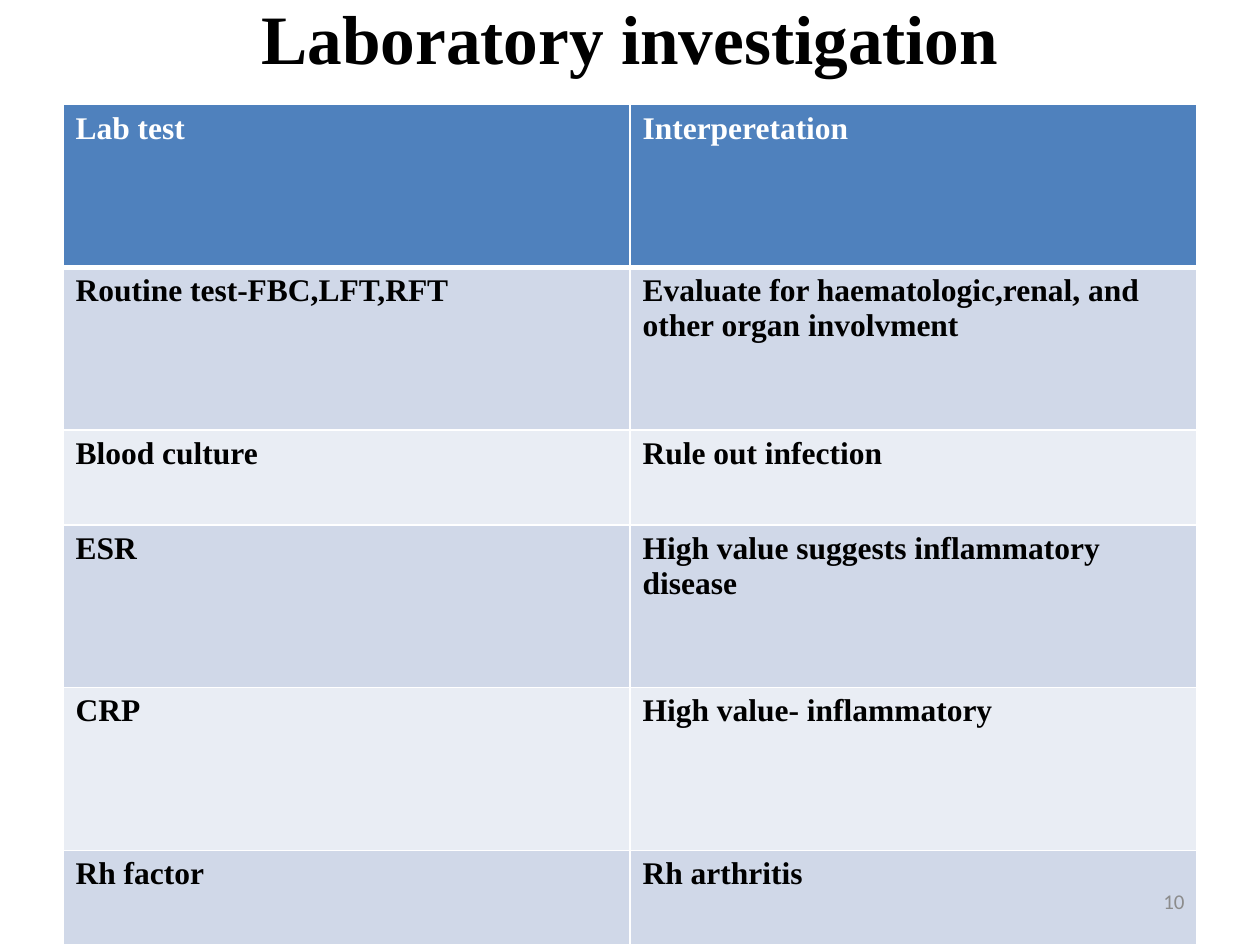
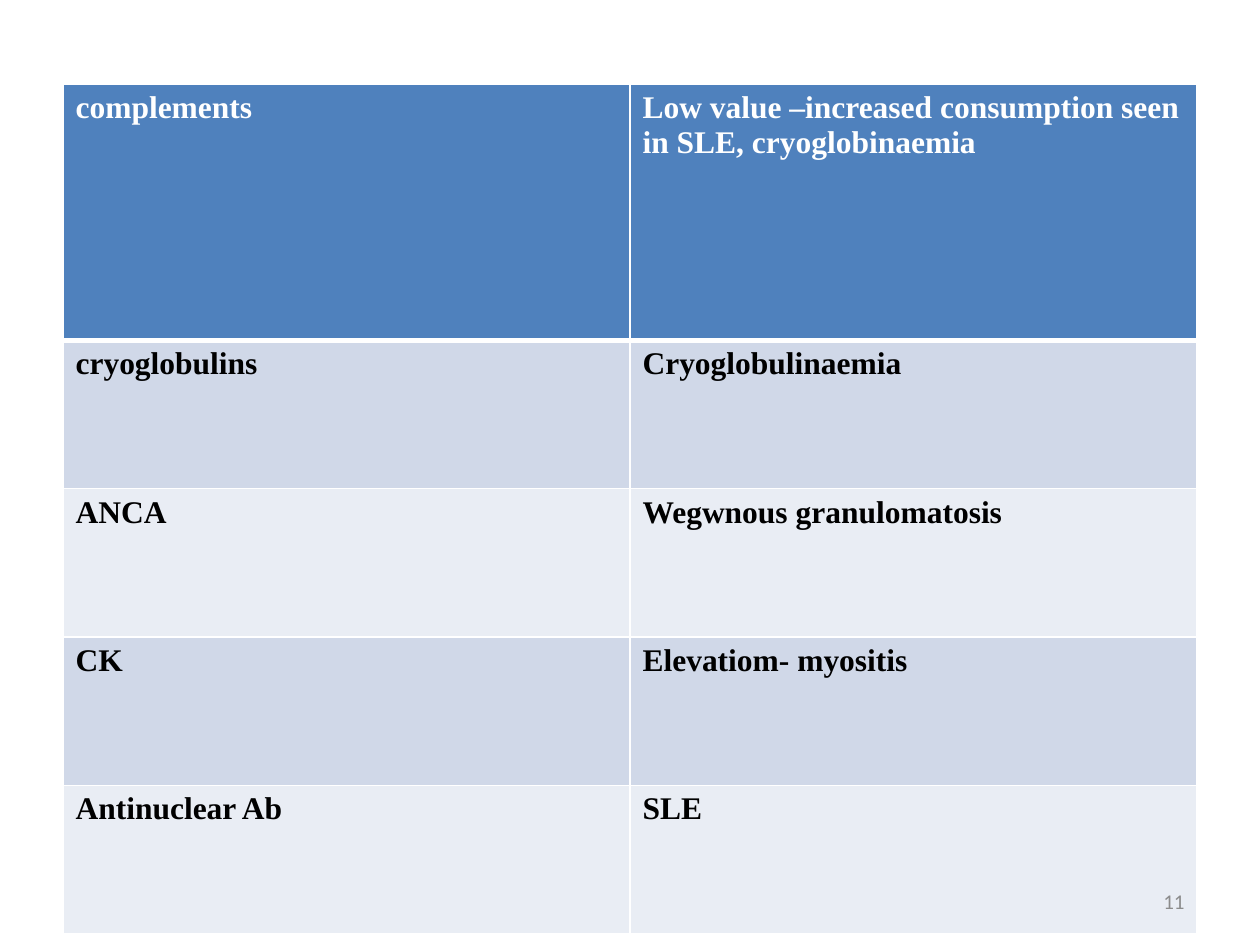
from dataclasses import dataclass

from lxml import etree
from pptx import Presentation
from pptx.dml.color import RGBColor
from pptx.enum.text import MSO_ANCHOR, PP_ALIGN
from pptx.oxml.ns import qn
from pptx.util import Cm, Pt

LEFT, CENTER, RIGHT = PP_ALIGN.LEFT, PP_ALIGN.CENTER, PP_ALIGN.RIGHT
TOP, MIDDLE = MSO_ANCHOR.TOP, MSO_ANCHOR.MIDDLE

SLIDES = [
    {
        "title": "Laboratory investigation",
        "number": "10",
        "table_top": 2.11,
        "row_heights": [3.28, 3.28, 1.91, 3.28, 3.28, 1.91],
        "rows": [
            ("Lab test", "Interperetation"),
            ("Routine test-FBC,LFT,RFT",
             "Evaluate for haematologic,renal, and other organ involvment"),
            ("Blood culture", "Rule out infection"),
            ("ESR", "High value suggests inflammatory disease"),
            ("CRP", "High value- inflammatory"),
            ("Rh factor", "Rh arthritis"),
        ],
    },
    {
        "title": None,
        "number": "11",
        "table_top": 1.7,
        "row_heights": [5.16] + [2.99] * 4,
        "rows": [
            ("complements",
             "Low value –increased consumption seen in SLE, cryoglobinaemia"),
            ("cryoglobulins", "Cryoglobulinaemia"),
            ("ANCA", "Wegwnous granulomatosis"),
            ("CK", "Elevatiom- myositis"),
            ("Antinuclear Ab", "SLE"),
        ],
    },
]


@dataclass(frozen=True)
class Theme:
    heading_font: str = "Times New Roman"
    number_font: str = "Calibri"
    title_size: float = 39.6
    cell_size: float = 18
    number_size: float = 12
    text: str = "000000"
    header_text: str = "FFFFFF"
    number: str = "8C8C8C"
    header_fill: str = "4F81BD"
    bands: tuple = ("D0D8E8", "E9EDF4")
    border: str = "FFFFFF"
    thin: float = 1
    thick: float = 3


THEME = Theme()
TITLE_ONLY, BLANK = 5, 6
MARGIN, CONTENT_WIDTH = Cm(1.27), Cm(22.86)


def write_text(frame, text, font=THEME.heading_font, size=THEME.cell_size,
               color=THEME.text, bold=True, align=LEFT, anchor=TOP):
    frame.word_wrap = True
    frame.vertical_anchor = anchor
    paragraph = frame.paragraphs[0]
    paragraph.alignment = align
    run = paragraph.add_run()
    run.text = text
    run.font.name = font
    run.font.size = Pt(size)
    run.font.bold = bold
    run.font.color.rgb = RGBColor.from_string(color)


def set_borders(cell, top, bottom):
    """Draw all four edges; call before the fill, which must follow them."""
    properties = cell._tc.get_or_add_tcPr()
    widths = {"lnL": THEME.thin, "lnR": THEME.thin, "lnT": top, "lnB": bottom}
    for edge, width in widths.items():
        line = etree.SubElement(properties, qn(f"a:{edge}"), w=str(Pt(width)))
        fill = etree.SubElement(line, qn("a:solidFill"))
        etree.SubElement(fill, qn("a:srgbClr"), val=THEME.border)


def add_title(slide, text):
    title = slide.shapes.title
    title.left, title.top = MARGIN, 0
    title.width, title.height = CONTENT_WIDTH, Cm(1.47)
    write_text(title.text_frame, text, size=THEME.title_size,
               align=CENTER, anchor=MIDDLE)


def add_lab_table(slide, rows, row_heights, top):
    heights = [Cm(height) for height in row_heights]
    columns = len(rows[0])
    table = slide.shapes.add_table(len(rows), columns, MARGIN, Cm(top),
                                   CONTENT_WIDTH, sum(heights)).table
    for row_index, (texts, height) in enumerate(zip(rows, heights)):
        is_header = row_index == 0
        color = THEME.header_text if is_header else THEME.text
        fill = THEME.header_fill if is_header else THEME.bands[(row_index - 1) % 2]
        table.rows[row_index].height = height
        for column, text in enumerate(texts):
            cell = table.cell(row_index, column)
            set_borders(cell,
                        top=THEME.thick if row_index == 1 else THEME.thin,
                        bottom=THEME.thick if is_header else THEME.thin)
            cell.fill.solid()
            cell.fill.fore_color.rgb = RGBColor.from_string(fill)
            write_text(cell.text_frame, text, color=color)


def add_slide_number(slide, number):
    width = Cm(5.93)
    box = slide.shapes.add_textbox(MARGIN + CONTENT_WIDTH - width, Cm(17.65),
                                   width, Cm(1.02))
    write_text(box.text_frame, number, font=THEME.number_font,
               size=THEME.number_size, color=THEME.number, bold=False,
               align=RIGHT, anchor=MIDDLE)


def main():
    presentation = Presentation()
    presentation.slide_width, presentation.slide_height = Cm(25.4), Cm(19.05)
    for content in SLIDES:
        layout = TITLE_ONLY if content["title"] else BLANK
        slide = presentation.slides.add_slide(presentation.slide_layouts[layout])
        if content["title"]:
            add_title(slide, content["title"])
        add_lab_table(slide, content["rows"], content["row_heights"],
                      content["table_top"])
        add_slide_number(slide, content["number"])
    presentation.save("out.pptx")


if __name__ == "__main__":
    main()
